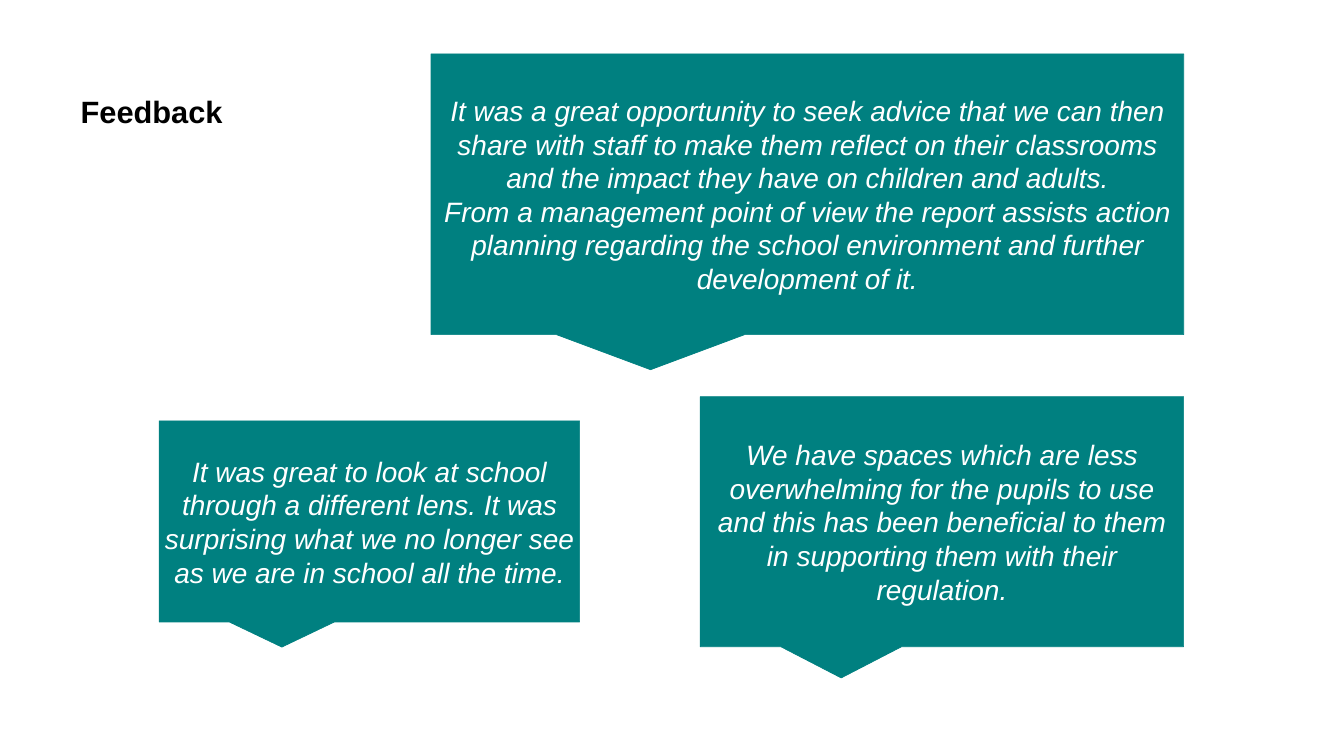
from pptx import Presentation
from pptx import util as u
from pptx.dml.color import RGBColor
from pptx.enum import shapes, text

COLORS = {"teal": "008080", "white": "FFFFFF", "black": "000000"}
WIDTH, HEIGHT = u.Inches(26.66), u.Inches(15)
RIGHT_EDGE = 88.07

QUOTES = [
    ((32.07, 7.13, RIGHT_EDGE - 32.07, 37.13),
     "It was a great opportunity to seek advice that we can then share with staff "
     "to make them reflect on their classrooms and the impact they have on children "
     "and adults.\vFrom a management point of view the report assists action planning "
     "regarding the school environment and further development of it."),
    ((52.1, 52.47, RIGHT_EDGE - 52.1, 33.07),
     "We have spaces which are less overwhelming for the pupils to use and this has "
     "been beneficial to them in supporting them with their regulation."),
    ((11.85, 55.67, 31.28, 26.6),
     "It was great to look at school through a different lens. It was surprising "
     "what we no longer see as we are in school all the time."),
]


def color(name):
    return RGBColor.from_string(COLORS[name])


def place(box):
    left, top, width, height = (share / 100 for share in box)
    return (round(left * WIDTH), round(top * HEIGHT),
            round(width * WIDTH), round(height * HEIGHT))


def write(shape, words, size, ink):
    frame = shape.text_frame
    frame.word_wrap = True
    frame.vertical_anchor = text.MSO_ANCHOR.MIDDLE
    para = frame.paragraphs[0]
    para.text = words
    para.font.name = "Arial"
    para.font.size = u.Pt(size)
    para.font.color.rgb = color(ink)
    return para


def add_title(page, box, words):
    para = write(page.shapes.add_textbox(*place(box)), words, 44, "black")
    para.font.bold = True
    para.line_spacing = 0.9


def add_quote(page, box, words):
    bubble = page.shapes.add_shape(
        shapes.MSO_SHAPE.RECTANGULAR_CALLOUT, *place(box))
    bubble.shadow.inherit = False
    bubble.fill.solid()
    bubble.fill.fore_color.rgb = color("teal")
    bubble.line.color.rgb = color("teal")
    bubble.line.width = u.Pt(1)
    para = write(bubble, words, 40, "white")
    para.font.italic = True
    para.alignment = text.PP_ALIGN.CENTER


def main():
    deck = Presentation()
    deck.slide_width, deck.slide_height = WIDTH, HEIGHT
    page = deck.slides.add_slide(deck.slide_layouts[6])
    add_title(page, (5.63, 5.33, 87.51, 19.33), "Feedback")
    for box, words in QUOTES:
        add_quote(page, box, words)
    deck.save("out.pptx")


if __name__ == "__main__":
    main()
